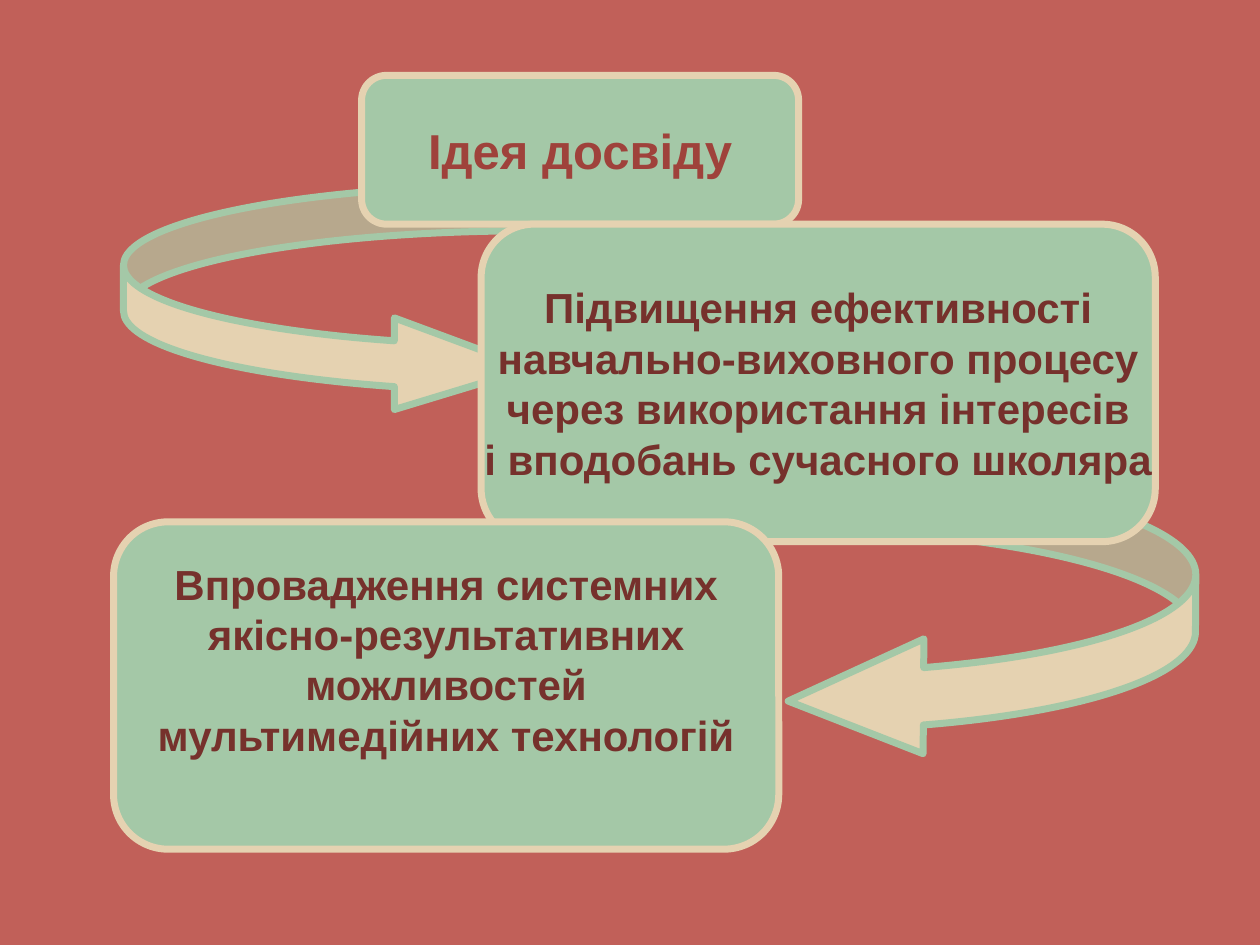
from pptx import Presentation
from pptx.dml.color import RGBColor
from pptx.enum.shapes import MSO_SHAPE
from pptx.enum.text import MSO_ANCHOR, PP_ALIGN
from pptx.util import Cm, Pt

CURVED_ARROW = MSO_SHAPE.CURVED_RIGHT_ARROW
ROUNDED_BOX = MSO_SHAPE.ROUNDED_RECTANGLE
MIDDLE = MSO_ANCHOR.MIDDLE
CENTER = PP_ALIGN.CENTER

BACKGROUND = RGBColor(0xC1, 0x60, 0x59)
GREEN = RGBColor(0xA4, 0xC8, 0xA7)
SAND = RGBColor(0xE5, 0xD2, 0xB1)
TITLE_RED = RGBColor(0x9F, 0x42, 0x3B)
TEXT_RED = RGBColor(0x76, 0x31, 0x2C)

IDEA = ["Ідея досвіду"]
GOAL = [
    "Підвищення ефективності",
    "навчально-виховного процесу",
    "через використання інтересів",
    "і вподобань сучасного школяра",
]
METHOD = [
    "Впровадження системних",
    "якісно-результативних",
    "можливостей",
    "мультимедійних технологій",
]


def add_outlined_shape(slide, kind, box, fill, line):
    shape = slide.shapes.add_shape(kind, *[Cm(length) for length in box])
    shape.shadow.inherit = False
    shape.fill.solid()
    shape.fill.fore_color.rgb = fill
    shape.line.color.rgb = line
    shape.line.width = Pt(4)
    return shape


def add_curved_arrow(slide, box, head_length, points_left=False):
    arrow = add_outlined_shape(slide, CURVED_ARROW, box, SAND, GREEN)
    for index, value in enumerate((0.2, 0.4, head_length)):
        arrow.adjustments[index] = value
    if points_left:
        arrow.rotation = 180.4
        arrow._element.spPr.xfrm.set("flipV", "1")


def add_text_box(slide, box, lines, size, color, bottom_margin=0.13):
    shape = add_outlined_shape(slide, ROUNDED_BOX, box, GREEN, SAND)
    shape.adjustments[0] = 0.167
    frame = shape.text_frame
    frame.word_wrap = False
    frame.vertical_anchor = MIDDLE
    frame.margin_bottom = Cm(bottom_margin)
    for index, text in enumerate(lines):
        paragraph = frame.add_paragraph() if index else frame.paragraphs[0]
        paragraph.alignment = CENTER
        run = paragraph.add_run()
        run.text = text
        run.font.name = "Arial"
        run.font.size = Pt(size)
        run.font.bold = True
        run.font.color.rgb = color


def build_slide(presentation):
    slide = presentation.slides.add_slide(presentation.slide_layouts[6])
    slide.background.fill.solid()
    slide.background.fill.fore_color.rgb = BACKGROUND
    add_curved_arrow(slide, (15.9, 9.53, 8.2, 5.79), 0.471, points_left=True)
    add_curved_arrow(slide, (2.49, 3.73, 8.2, 4.62), 0.593)
    add_text_box(slide, (7.29, 1.52, 8.81, 3), IDEA, 28, TITLE_RED)
    add_text_box(slide, (9.7, 4.52, 13.59, 6.4), GOAL, 24, TEXT_RED)
    add_text_box(slide, (2.29, 10.52, 13.41, 6.6), METHOD, 24, TEXT_RED, 1.2)


def main():
    presentation = Presentation()
    presentation.slide_width = Cm(25.4)
    presentation.slide_height = Cm(19.05)
    build_slide(presentation)
    presentation.save("out.pptx")


if __name__ == "__main__":
    main()
